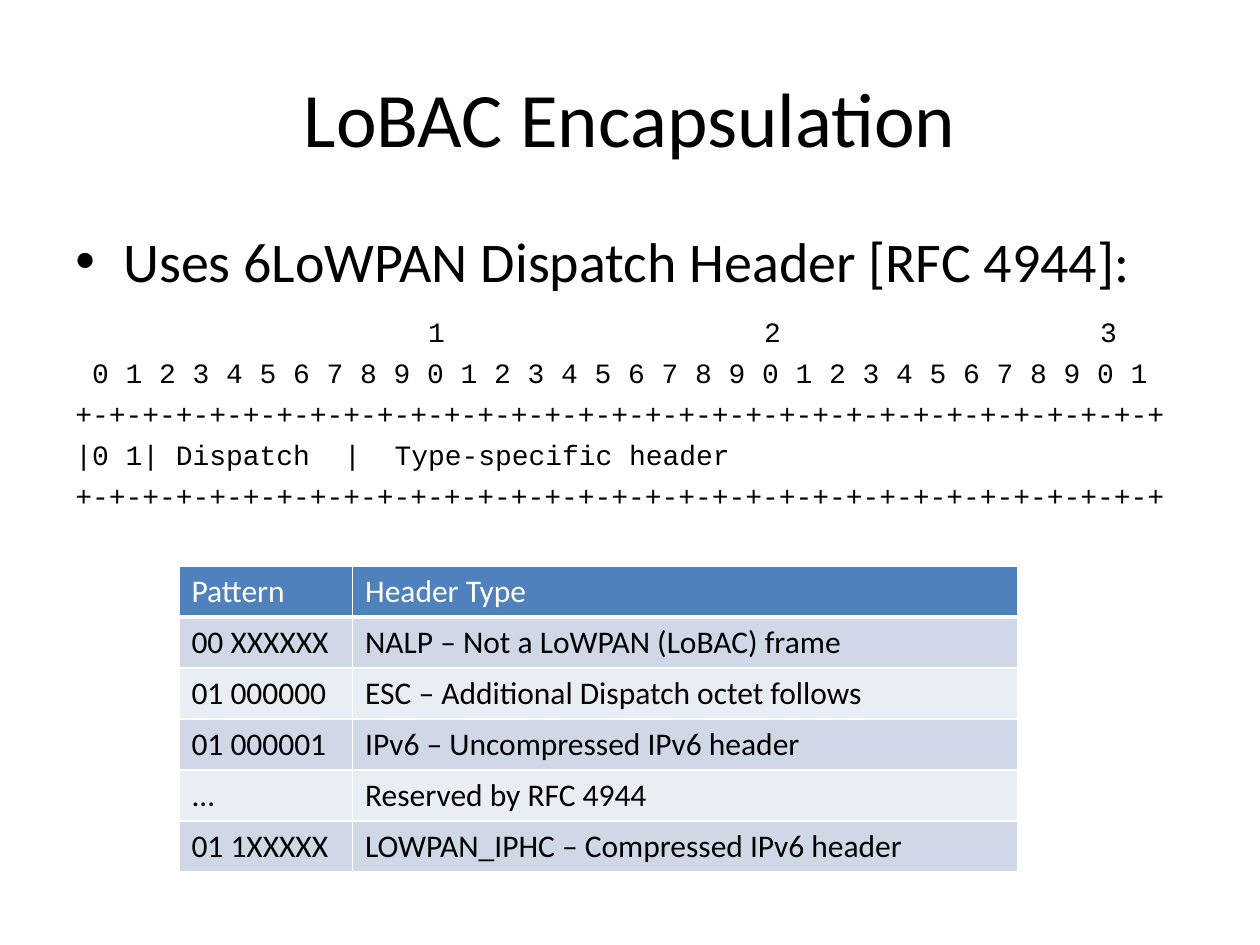
from dataclasses import dataclass

from lxml import etree
from pptx import Presentation
from pptx.dml.color import RGBColor
from pptx.enum.text import MSO_ANCHOR, PP_ALIGN
from pptx.oxml.ns import qn
from pptx.util import Inches, Pt

BLACK = RGBColor(0x00, 0x00, 0x00)
WHITE = RGBColor(0xFF, 0xFF, 0xFF)
HEADER_BLUE = RGBColor(0x4F, 0x81, 0xBD)
BAND_FILLS = (RGBColor(0xD0, 0xD8, 0xE8), RGBColor(0xE9, 0xED, 0xF4))
CENTER = PP_ALIGN.CENTER
LEFT = PP_ALIGN.LEFT
MIDDLE = MSO_ANCHOR.MIDDLE
TOP = MSO_ANCHOR.TOP

SLIDE_WIDTH = Inches(10)
SLIDE_HEIGHT = Inches(7.5)
DIAGRAM_SIZE = 16
CHARACTER_WIDTH = Pt(DIAGRAM_SIZE * 0.6)
BULLET_INDENT = Inches(0.38)
BIT_COUNT = 32


@dataclass(frozen=True)
class Area:
    left: float
    top: float
    width: float
    height: float

    def lengths(self) -> tuple[int, int, int, int]:
        return (
            int(self.left * SLIDE_WIDTH),
            int(self.top * SLIDE_HEIGHT),
            int(self.width * SLIDE_WIDTH),
            int(self.height * SLIDE_HEIGHT),
        )


@dataclass(frozen=True)
class Line:
    text: str
    size: float
    font: str = "Calibri"
    color: RGBColor = BLACK
    align: PP_ALIGN = LEFT
    space_before: float = 0
    bullet: bool = False
    tab_columns: tuple[int, ...] = ()


@dataclass(frozen=True)
class HeaderType:
    pattern: str
    meaning: str


TITLE_AREA = Area(0.05, 0.04, 0.9, 1 / 6)
BODY_AREA = Area(0.05, 0.7 / 3, 0.9, 0.34)
TABLE_AREA = Area(0.142, 0.599, 0.666, 0.324)
PATTERN_SHARE = 0.207

TITLE = Line("LoBAC Encapsulation", 44, align=CENTER)
INTRO = Line("Uses 6LoWPAN Dispatch Header [RFC 4944]:", 32, bullet=True)
BIT_NUMBERS = " " + " ".join(str(bit % 10) for bit in range(BIT_COUNT))
RULE = "+-" * BIT_COUNT + "+"


def diagram_line(text: str, space_before: float = 4.2, tab_columns: tuple[int, ...] = ()) -> Line:
    return Line(text, DIAGRAM_SIZE, "Courier New", space_before=space_before, tab_columns=tab_columns)


DIAGRAM = (
    diagram_line("\t1\t2\t3", 12, (21, 41, 61)),
    diagram_line(BIT_NUMBERS),
    diagram_line(RULE),
    diagram_line("|0 1| Dispatch\t|\tType-specific header", tab_columns=(16, 19)),
    diagram_line(RULE),
)

HEADING = HeaderType("Pattern", "Header Type")
HEADER_TYPES = (
    HeaderType("00 XXXXXX", "NALP – Not a LoWPAN (LoBAC) frame"),
    HeaderType("01 000000", "ESC – Additional Dispatch octet follows"),
    HeaderType("01 000001", "IPv6 – Uncompressed IPv6 header"),
    HeaderType("...", "Reserved by RFC 4944"),
    HeaderType("01 1XXXXX", "LOWPAN_IPHC – Compressed IPv6 header"),
)


def write_line(paragraph, line: Line) -> None:
    paragraph.alignment = line.align
    paragraph.space_before = Pt(line.space_before)
    properties = paragraph._p.get_or_add_pPr()
    if line.bullet:
        properties.set("marL", str(BULLET_INDENT))
        properties.set("indent", str(-BULLET_INDENT))
        etree.SubElement(properties, qn("a:buFont"), typeface="Arial")
        etree.SubElement(properties, qn("a:buChar"), char="•")
    if line.tab_columns:
        tabs = etree.SubElement(properties, qn("a:tabLst"))
        for column in line.tab_columns:
            etree.SubElement(tabs, qn("a:tab"), pos=str(column * CHARACTER_WIDTH), algn="l")
    run = paragraph.add_run()
    run.text = line.text
    run.font.color.rgb = line.color
    font_format = {"name": line.font, "size": Pt(line.size), "bold": False}
    for attribute, value in font_format.items():
        setattr(run.font, attribute, value)


def add_text(slide, area: Area, lines: tuple[Line, ...], anchor: MSO_ANCHOR) -> None:
    frame = slide.shapes.add_textbox(*area.lengths()).text_frame
    frame.word_wrap = True
    frame.vertical_anchor = anchor
    for index, line in enumerate(lines):
        write_line(frame.add_paragraph() if index else frame.paragraphs[0], line)


def border_cell(cell, widths: dict[str, float]) -> None:
    properties = cell._tc.get_or_add_tcPr()
    for position, (side, width) in enumerate(widths.items()):
        border = etree.Element(qn(f"a:{side}"), w=str(Pt(width)))
        fill = etree.SubElement(border, qn("a:solidFill"))
        etree.SubElement(fill, qn("a:srgbClr"), val=str(WHITE))
        properties.insert(position, border)


def add_header_types(slide, area: Area) -> None:
    rows = (HEADING, *HEADER_TYPES)
    table = slide.shapes.add_table(len(rows), 2, *area.lengths()).table
    table_width = area.lengths()[2]
    for column, share in zip(table.columns, (PATTERN_SHARE, 1 - PATTERN_SHARE)):
        column.width = int(table_width * share)
    for row_index, row in enumerate(rows):
        is_heading = row_index == 0
        fill = HEADER_BLUE if is_heading else BAND_FILLS[(row_index - 1) % 2]
        color = WHITE if is_heading else BLACK
        for column_index, text in enumerate((row.pattern, row.meaning)):
            cell = table.cell(row_index, column_index)
            cell.fill.solid()
            cell.fill.fore_color.rgb = fill
            write_line(cell.text_frame.paragraphs[0], Line(text, 18, color=color))
            border_cell(cell, {"lnL": 1, "lnR": 1, "lnT": 1, "lnB": 3 if is_heading else 1})


def main() -> None:
    presentation = Presentation()
    presentation.slide_width = SLIDE_WIDTH
    presentation.slide_height = SLIDE_HEIGHT
    slide = presentation.slides.add_slide(presentation.slide_layouts[6])
    add_text(slide, TITLE_AREA, (TITLE,), MIDDLE)
    add_text(slide, BODY_AREA, (INTRO, *DIAGRAM), TOP)
    add_header_types(slide, TABLE_AREA)
    presentation.save("out.pptx")


if __name__ == "__main__":
    main()
